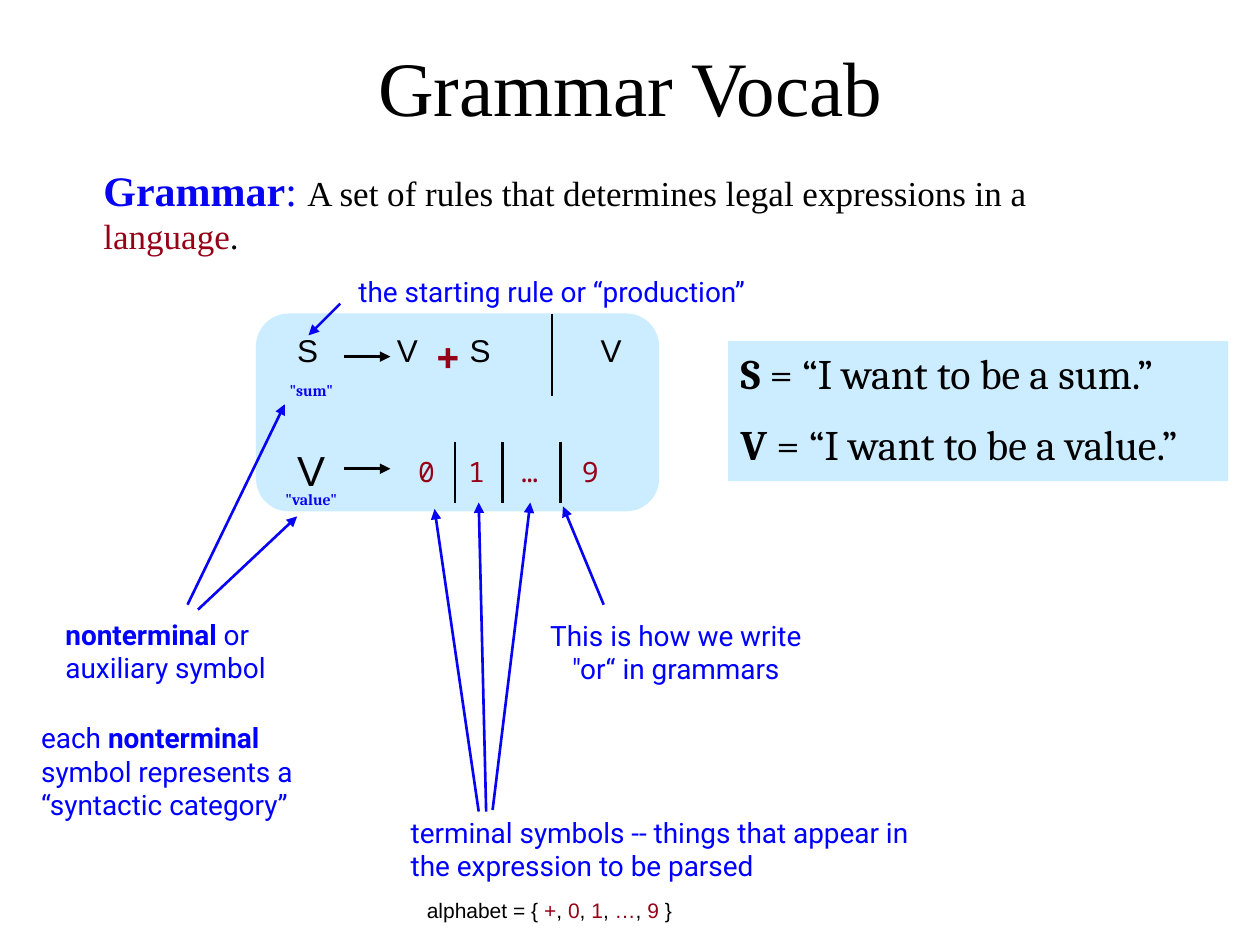
import lxml.etree
import pptx
import pptx.dml.color
import pptx.enum.shapes
import pptx.enum.text
import pptx.oxml.ns
import pptx.util

BLACK, BLUE, INK, RED, PALE = "000000", "0000FF", "0703F3", "960117", "CCECFF"
ALIGN = pptx.enum.text.PP_ALIGN
SHAPE = pptx.enum.shapes.MSO_SHAPE
TITLE = {"name": "Times New Roman", "size": 44, "color": BLACK}
LEAD = {"name": "Times New Roman", "size": 20, "color": BLACK}
NOTE = {"name": "Roboto", "size": 16, "color": BLUE}
RULE = {"name": "Arial", "size": 18, "color": BLACK}
MONO = {"name": "Noto Sans Mono", "size": 16, "color": RED}
WISH = {"name": "Cambria", "size": 24, "color": BLACK}
TAG = {"name": "Cambria", "size": 9, "color": INK, "bold": True}
BOLD = {"bold": True}
MARK = {"color": RED}


def rgb(code):
    return pptx.dml.color.RGBColor.from_string(code)


def add_tag(node, name, **values):
    return lxml.etree.SubElement(node, pptx.oxml.ns.qn(name), **values)


def place(shape, spot):
    for key, size in zip(("left", "top", "width", "height"), spot):
        setattr(shape, key, pptx.util.Cm(size))


def style(run, form):
    form = dict(form)
    run.font.color.rgb = rgb(form.pop("color"))
    form["size"] = pptx.util.Pt(form["size"])
    for key, value in form.items():
        setattr(run.font, key, value)


def write(shape, form, *lines, align=ALIGN.LEFT, space=True, tight=None, plain=False):
    frame = shape.text_frame
    setup = {
        "word_wrap": True,
        "auto_size": pptx.enum.text.MSO_AUTO_SIZE.SHAPE_TO_FIT_TEXT,
        "vertical_anchor": pptx.enum.text.MSO_ANCHOR.TOP,
    }
    for key, value in setup.items():
        setattr(frame, key, value)
    for num, line in enumerate(lines):
        para = frame.add_paragraph() if num else frame.paragraphs[0]
        props = para._p.get_or_add_pPr()
        if space:
            add_tag(add_tag(props, "a:spcBef"), "a:spcPct", val="50000")
        if plain:
            props.set("marL", "0")
            props.set("indent", "0")
            add_tag(props, "a:buNone")
        para.alignment = align
        if tight:
            para.line_spacing = tight
        for text, extra in line:
            run = para.add_run()
            run.text = text
            style(run, {**form, **extra})


def add_text(slide, spot, form, *runs, **more):
    box = slide.shapes.add_textbox(*map(pptx.util.Cm, spot))
    write(box, form, runs, **more)


def add_panel(slide, kind, spot):
    panel = slide.shapes.add_shape(kind, *map(pptx.util.Cm, spot))
    panel.shadow.inherit = False
    panel.fill.solid()
    panel.fill.fore_color.rgb = rgb(PALE)
    panel.line.fill.background()
    return panel


def add_line(slide, start, end, color, arrow=True):
    line = slide.shapes.add_connector(
        pptx.enum.shapes.MSO_CONNECTOR.STRAIGHT, *map(pptx.util.Cm, start + end))
    line.line.color.rgb = rgb(color)
    line.line.width = pptx.util.Pt(1.5)
    if arrow:
        add_tag(line.line._get_or_add_ln(), "a:tailEnd", type="triangle")
    add_tag(line._element.spPr, "a:effectLst")


def add_heads(slide):
    title, body = slide.placeholders
    place(title, (1.9, 0.66, 21.62, 2.11))
    write(title, TITLE, [("Grammar Vocab", {})], align=ALIGN.CENTER)
    place(body, (1.83, 3.18, 21.97, 1.27))
    write(body, LEAD, [
        ("Grammar", {"size": 24, "color": INK, "bold": True}),
        (": ", {"size": 24, "color": INK}),
        ("A set of rules that determines legal expressions in a ", {}),
        ("language", MARK), (".", {})], plain=True)


def add_rules(slide):
    add_panel(slide, SHAPE.ROUNDED_RECTANGLE, (5.16, 6.32, 8.13, 3.99))
    for text, left in (("S", 5.74), ("V", 7.75), ("S", 9.22), ("V", 11.86)):
        add_text(slide, (left, 6.55, 1.07, 1.02), RULE, (text, {}), space=False)
    add_text(slide, (8.53, 6.55, 1.27, 1.27), MONO,
             ("+", {"size": 24, "bold": True}), space=False)
    add_text(slide, (5.74, 8.84, 1.5, 1.27), RULE, ("V", {"size": 24}))
    for text, left in (("0", 8.18), ("1", 9.19), ("…", 10.26), ("9", 11.48)):
        add_text(slide, (left, 9.04, 0.86, 0.94), MONO, (text, {}), space=False)
    for text, top in (('"sum"', 7.62), ('"value"', 9.83)):
        add_text(slide, (5.21, top, 2.13, 0.56), TAG, (text, {}),
                 align=ALIGN.CENTER, tight=0.8)
    for top in (7.19, 9.45):
        add_line(slide, (6.93, top), (7.87, top), BLACK)
    add_line(slide, (11.13, 6.32), (11.13, 7.98), BLACK, False)
    for left in (9.17, 10.13, 11.3):
        add_line(slide, (left, 8.92), (left, 10.13), BLACK, False)


def add_notes(slide):
    add_text(slide, (6.4, 5.41, 9.45, 0.94), NOTE,
             ("the starting rule or “production”", {}), align=ALIGN.CENTER)
    add_text(slide, (1.07, 12.32, 4.8, 1.63), NOTE,
             ("nonterminal", BOLD), (" or auxiliary symbol", {}))
    add_text(slide, (0.58, 14.4, 6.05, 2.31), NOTE, ("each ", {}),
             ("nonterminal", BOLD), (" symbol represents a “syntactic category”", {}))
    add_text(slide, (10.54, 12.34, 6.17, 1.63), NOTE,
             ('This is how we write "or“ in grammars', {}), align=ALIGN.CENTER)
    add_text(slide, (8.03, 16.31, 11.02, 1.63), NOTE,
             ("terminal symbols -- things that appear in the expression to be parsed", {}))
    runs = [("alphabet = { ", {})]
    for sign in "+01…9":
        runs += [(sign, MARK), (", ", {})]
    runs[-1] = (" }", {})
    add_text(slide, (8.18, 17.96, 5.79, 0.76), {**RULE, "size": 12}, *runs,
             align=ALIGN.CENTER)


def add_arrows(slide):
    ends = (
        ((6.86, 6.12), (6.22, 6.76)),
        ((3.99, 12.29), (5.99, 10.41)),
        ((3.78, 12.19), (5.74, 8.15)),
        ((9.65, 16.36), (8.76, 10.26)),
        ((9.8, 16.36), (9.65, 10.13)),
        ((9.93, 16.33), (10.69, 10.13)),
        ((12.17, 12.19), (11.35, 10.21)),
    )
    for start, end in ends:
        add_line(slide, start, end, INK)


def main():
    deck = pptx.Presentation()
    deck.slide_width, deck.slide_height = pptx.util.Cm(25.4), pptx.util.Cm(19.05)
    slide = deck.slides.add_slide(deck.slide_layouts[1])
    add_heads(slide)
    add_rules(slide)
    wish = add_panel(slide, SHAPE.RECTANGLE, (14.68, 6.88, 10.08, 2.82))
    write(wish, WISH, [("S", BOLD), (" = “I want to be a sum.”", {})],
          [("V", BOLD), (" = “I want to be a value.”", {})])
    add_notes(slide)
    add_arrows(slide)
    deck.save("out.pptx")


if __name__ == "__main__":
    main()
